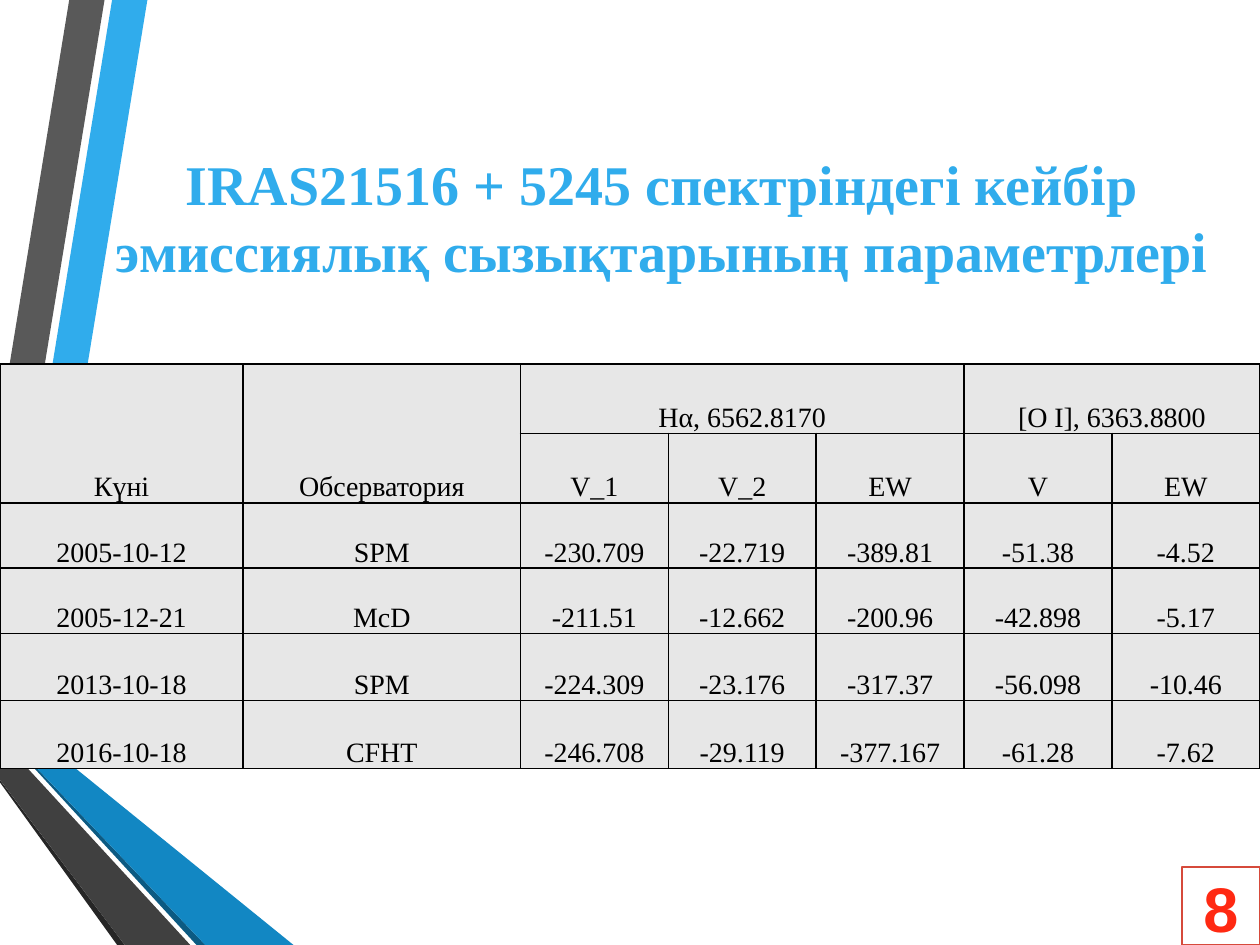
import lxml.etree
import pptx
import pptx.dml.color
import pptx.enum.shapes
import pptx.enum.text
import pptx.oxml.ns
import pptx.util

ALIGN = pptx.enum.text.PP_ALIGN
ANCHOR = pptx.enum.text.MSO_ANCHOR
SERIF = "Times New Roman"
BLUE = "30ACEC"

RIBBONS = [
    (BLUE, [(0, 54.4), (0, 57.5), (2.2, 57.9), (11.7, 0), (8.9, 0)]),
    ("595959", [(8.3, 0), (5.5, 0), (0, 33.6), (0, 50.6)]),
    ("262626", [(0, 61.9), (0, 62.1), (9.3, 75), (9.9, 75)]),
    ("0C5A82", [(0, 57.9), (0, 58), (15.6, 75), (16.3, 75)]),
    ("1287C3", [(0, 57.9), (16.3, 75), (23.3, 75), (2.2, 57.9), (0, 57.5)]),
    ("404040", [(0, 61.9), (9.9, 75), (15.1, 75), (0, 58.6)]),
]

ROWS = [
    ["Күні", "Обсерватория", "Hα, 6562.8170", "", "", "[O I], 6363.8800", ""],
    ["", "", "V_1", "V_2", "EW", "V", "EW"],
    ["2005-10-12", "SPM", "-230.709", "-22.719", "-389.81", "-51.38", "-4.52"],
    ["2005-12-21", "McD", "-211.51", "-12.662", "-200.96", "-42.898", "-5.17"],
    ["2013-10-18", "SPM", "-224.309", "-23.176", "-317.37", "-56.098", "-10.46"],
    ["2016-10-18", "CFHT", "-246.708", "-29.119", "-377.167", "-61.28", "-7.62"],
]
MERGES = [((0, 0), (1, 0)), ((0, 1), (1, 1)), ((0, 2), (0, 4)), ((0, 5), (0, 6))]


def rgb(value):
    return pptx.dml.color.RGBColor.from_string(value)


def apply(obj, values):
    for name, value in values.items():
        setattr(obj, name, value)


class Deck:
    columns, rows = 100, 75
    cell_fill, border = "E7E7E7", "000000"

    def __init__(self, width, height):
        self.prs = pptx.Presentation()
        apply(self.prs, {"slide_width": pptx.util.Inches(width),
                         "slide_height": pptx.util.Inches(height)})
        self.s = self.prs.slides.add_slide(self.prs.slide_layouts[6])

    def x(self, column):
        return round(self.prs.slide_width * column / self.columns)

    def y(self, row):
        return round(self.prs.slide_height * row / self.rows)

    def box(self, left, top, width, height):
        return self.x(left), self.y(top), self.x(width), self.y(height)

    def label(self, tf, text, size, color, font=SERIF, bold=False, spacing=1.0):
        p = tf.paragraphs[0]
        apply(p, {"alignment": ALIGN.CENTER, "line_spacing": spacing})
        r = p.add_run()
        r.text = text
        apply(r.font, {"name": font, "size": pptx.util.Pt(size), "bold": bold})
        r.font.color.rgb = rgb(color)

    def ribbon(self, color, points):
        corners = [(self.x(column), self.y(row)) for column, row in points]
        builder = self.s.shapes.build_freeform(*corners[0])
        builder.add_line_segments(corners[1:])
        sp = builder.convert_to_shape()
        sp.shadow.inherit = False
        sp.fill.solid()
        sp.fill.fore_color.rgb = rgb(color)
        sp.line.fill.background()

    def title(self, text, place):
        tf = self.s.shapes.add_textbox(*self.box(*place)).text_frame
        apply(tf, {"word_wrap": True, "vertical_anchor": ANCHOR.MIDDLE})
        self.label(tf, text, 32, BLUE, bold=True)

    def page_number(self, text, place):
        sp = self.s.shapes.add_shape(
            pptx.enum.shapes.MSO_SHAPE.RECTANGLE, *self.box(*place))
        sp.shadow.inherit = False
        sp.fill.solid()
        sp.fill.fore_color.rgb = rgb("FFFFFF")
        sp.line.color.rgb = rgb("D64A3B")
        sp.line.width = pptx.util.Pt(1.25)
        apply(sp.text_frame, {"margin_left": 0, "margin_right": 0, "margin_top": 0,
                              "margin_bottom": 0, "vertical_anchor": ANCHOR.BOTTOM})
        self.label(sp.text_frame, text, 36, "FF2912", "Arial", True)

    def outline(self, cell):
        props = cell._tc.get_or_add_tcPr()
        qn = pptx.oxml.ns.qn
        for side in "LRTB":
            line = lxml.etree.SubElement(
                props, qn(f"a:ln{side}"), w=str(pptx.util.Pt(1)))
            fill = lxml.etree.SubElement(line, qn("a:solidFill"))
            lxml.etree.SubElement(fill, qn("a:srgbClr"), val=self.border)

    def table(self, rows, merges, place, widths, heights):
        table = self.s.shapes.add_table(
            len(rows), len(widths), *self.box(*place)).table
        apply(table, {"first_row": False, "horz_banding": False})
        for column, width in zip(table.columns, widths):
            column.width = self.x(width)
        for row, height in zip(table.rows, heights):
            row.height = self.y(height)
        for first, last in merges:
            table.cell(*first).merge(table.cell(*last))
        side = pptx.util.Inches(0.07)
        for i, values in enumerate(rows):
            for j, text in enumerate(values):
                cell = table.cell(i, j)
                apply(cell, {"margin_left": side, "margin_right": side, "margin_top": 0,
                             "margin_bottom": 0, "vertical_anchor": ANCHOR.BOTTOM})
                self.outline(cell)
                cell.fill.solid()
                cell.fill.fore_color.rgb = rgb(self.cell_fill)
                if text:
                    self.label(cell.text_frame, text, 16, "000000", spacing=1.5)


def main():
    deck = Deck(10, 7.5)
    for color, points in RIBBONS:
        deck.ribbon(color, points)
    deck.title("IRAS21516 + 5245 спектріндегі кейбір эмиссиялық сызықтарының параметрлері",
               (5.1, 9.4, 94.9, 15.6))
    deck.page_number("8", (93.8, 68.8, 6.2, 6.2))
    deck.table(ROWS, MERGES, (0, 28.9, 100, 32),
               [19.3, 22] + [11.74] * 5, [5.5, 5.5, 5.2, 5.2, 5.3, 5.4])
    deck.prs.save("out.pptx")


if __name__ == "__main__":
    main()
